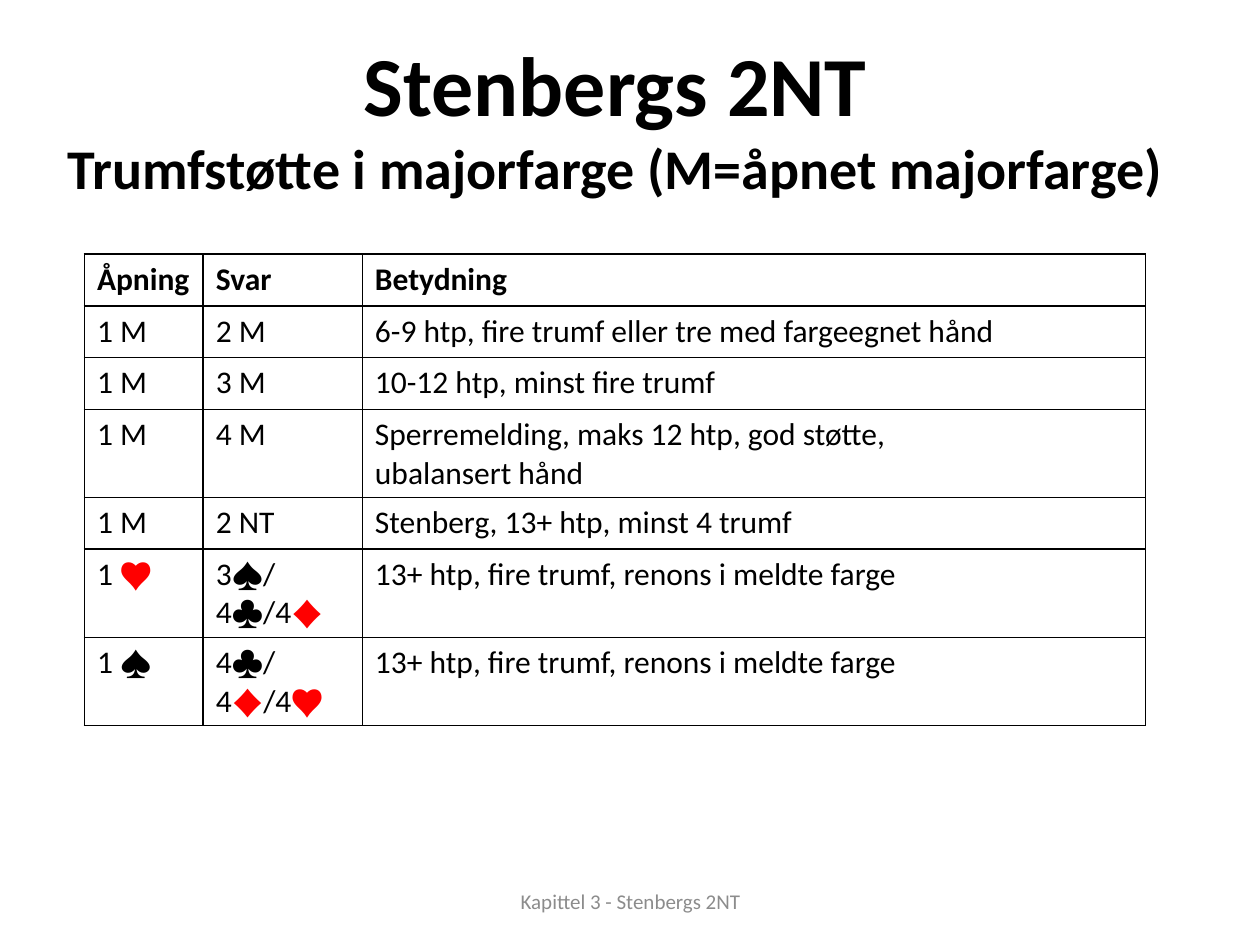
from dataclasses import dataclass
from itertools import groupby

from lxml import etree
from pptx import Presentation
from pptx import util as u
from pptx.dml.color import RGBColor
from pptx.enum import text
from pptx.oxml import ns


@dataclass(frozen=True)
class Theme:
    font: str = "Calibri"
    ink: str = "000000"
    red: str = "FF0000"
    muted: str = "8C8C8C"
    paper: str = "FFFFFF"
    title: int = 48
    subtitle: int = 32
    body: int = 18
    footer: int = 12
    border: int = 1


@dataclass(frozen=True)
class Area:
    """Box given as shares of the slide's width and height."""
    left: float
    top: float
    width: float
    height: float

    def lengths(self) -> tuple:
        return (int(self.left * WIDTH), int(self.top * HEIGHT),
                int(self.width * WIDTH), int(self.height * HEIGHT))


@dataclass(frozen=True)
class Bid:
    opening: str
    response: str
    meaning: str


THEME = Theme()
WIDTH, HEIGHT = u.Inches(10), u.Inches(7.5)
RED_SUITS = "♥♦"
TITLE_AREA = Area(0.012, 0.04, 0.953, 0.167)
FOOTER_AREA = Area(0.342, 0.927, 0.317, 0.053)
TABLE_AREA = Area(0.067, 0.269, 0.842, 0.383)
COLUMN_SHARES = (0.112, 0.15, 0.738)

HEADING = Bid("Åpning", "Svar", "Betydning")
VOID = "13+ htp, fire trumf, renons i meldte farge"
BIDS = (
    Bid("1 M", "2 M", "6-9 htp, fire trumf eller tre med fargeegnet hånd"),
    Bid("1 M", "3 M", "10-12 htp, minst fire trumf"),
    Bid("1 M", "4 M", "Sperremelding, maks 12 htp, god støtte,\nubalansert hånd"),
    Bid("1 M", "2 NT", "Stenberg, 13+ htp, minst 4 trumf"),
    Bid("1 ♥", "3♠/4♣/4♦", VOID),
    Bid("1 ♠", "4♣/4♦/4♥", VOID),
)


def add_run(paragraph, words: str, size: int, color: str, bold: bool = False) -> None:
    run = paragraph.add_run()
    run.text = words
    run.font.color.rgb = RGBColor.from_string(color)
    for name, value in {"name": THEME.font, "size": u.Pt(size), "bold": bold}.items():
        setattr(run.font, name, value)


def add_centred_box(slide, area: Area):
    """Add a wrapped, middle-anchored box and return its first paragraph."""
    frame = slide.shapes.add_textbox(*area.lengths()).text_frame
    frame.word_wrap = True
    frame.vertical_anchor = text.MSO_ANCHOR.MIDDLE
    paragraph = frame.paragraphs[0]
    paragraph.alignment = text.PP_ALIGN.CENTER
    return paragraph


def draw_borders(cell) -> None:
    properties = cell._tc.get_or_add_tcPr()
    for side in ("a:lnL", "a:lnR", "a:lnT", "a:lnB"):
        line = etree.SubElement(properties, ns.qn(side), w=str(u.Pt(THEME.border)))
        fill = etree.SubElement(line, ns.qn("a:solidFill"))
        etree.SubElement(fill, ns.qn("a:srgbClr"), val=THEME.ink)


def fill_cell(cell, words: str, bold: bool) -> None:
    draw_borders(cell)
    cell.fill.background()
    frame = cell.text_frame
    for index, line in enumerate(words.split("\n")):
        paragraph = frame.add_paragraph() if index else frame.paragraphs[0]
        # Hearts and diamonds are red, everything else is black
        for is_red, group in groupby(line, key=lambda mark: mark in RED_SUITS):
            add_run(paragraph, "".join(group), THEME.body,
                    THEME.red if is_red else THEME.ink, bold)


def add_bid_table(slide, area: Area) -> None:
    rows = (HEADING, *BIDS)
    table = slide.shapes.add_table(len(rows), len(COLUMN_SHARES), *area.lengths()).table
    for flag in ("first_row", "horz_banding"):
        setattr(table, flag, False)
    for column, share in zip(table.columns, COLUMN_SHARES):
        column.width = int(share * area.width * WIDTH)
    for row, bid in zip(table.rows, rows):
        for cell, words in zip(row.cells, (bid.opening, bid.response, bid.meaning)):
            fill_cell(cell, words, bold=bid is HEADING)


def main() -> None:
    deck = Presentation()
    deck.slide_width, deck.slide_height = WIDTH, HEIGHT
    slide = deck.slides.add_slide(deck.slide_layouts[6])
    slide.background.fill.solid()
    slide.background.fill.fore_color.rgb = RGBColor.from_string(THEME.paper)

    # Title and subtitle
    title = add_centred_box(slide, TITLE_AREA)
    add_run(title, "Stenbergs 2NT", THEME.title, THEME.ink, bold=True)
    title.add_line_break()
    add_run(title, "Trumfstøtte i majorfarge (M=åpnet majorfarge)",
            THEME.subtitle, THEME.ink, bold=True)

    # Footer
    footer = add_centred_box(slide, FOOTER_AREA)
    add_run(footer, "Kapittel 3 - Stenbergs 2NT", THEME.footer, THEME.muted)

    # Responses to a major opening
    add_bid_table(slide, TABLE_AREA)
    deck.save("out.pptx")


if __name__ == "__main__":
    main()
